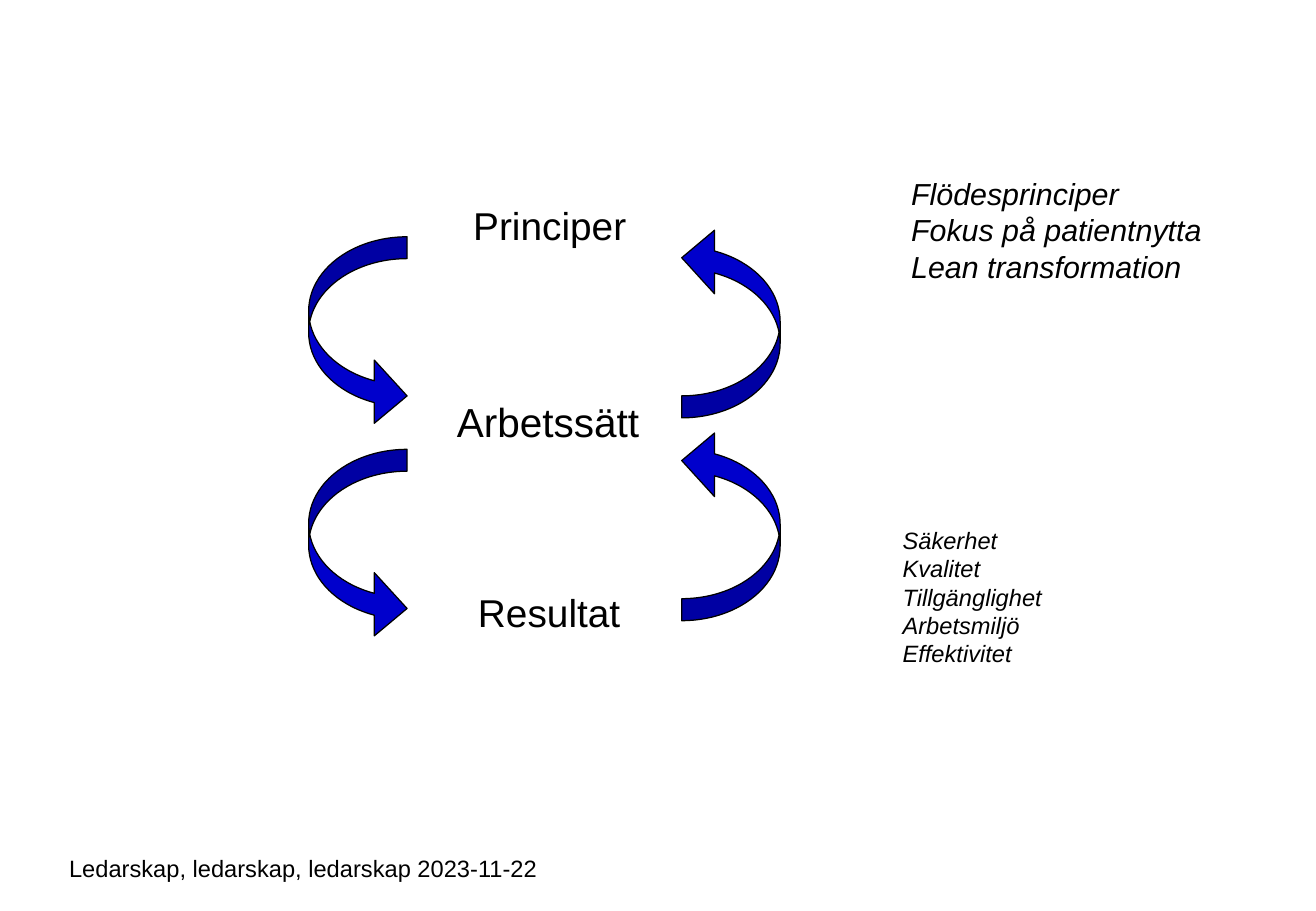
from dataclasses import dataclass

from pptx import Presentation
from pptx.dml.color import RGBColor
from pptx.enum.shapes import MSO_SHAPE
from pptx.enum.text import MSO_AUTO_SIZE, PP_ALIGN
from pptx.slide import Slide
from pptx.util import Inches, Pt

COLORS = {"arrow": "0000CC", "ink": "000000"}


@dataclass
class Label:
    lines: list[str]
    left: float
    top: float
    width: float
    height: float
    size: int
    align: PP_ALIGN = PP_ALIGN.LEFT
    italic: bool = False
    wrap: bool = True
    grow: bool = True


@dataclass
class Arrow:
    left: float
    top: float
    height: float
    turn: int
    bends: tuple[float, float, float]


def color(name: str) -> RGBColor:
    return RGBColor.from_string(COLORS[name])


def add_label(slide: Slide, label: Label) -> None:
    box = slide.shapes.add_textbox(
        Inches(label.left), Inches(label.top), Inches(label.width), Inches(label.height)
    )
    frame = box.text_frame
    frame.word_wrap = label.wrap
    frame.auto_size = MSO_AUTO_SIZE.SHAPE_TO_FIT_TEXT if label.grow else MSO_AUTO_SIZE.NONE
    frame.text = "\n".join(label.lines)
    style = {"name": "Arial", "size": Pt(label.size), "italic": label.italic}
    for para in frame.paragraphs:
        para.alignment = label.align
        for run in para.runs:
            for key, value in style.items():
                setattr(run.font, key, value)
            run.font.color.rgb = color("ink")


def add_arrow(slide: Slide, arrow: Arrow) -> None:
    shape = slide.shapes.add_shape(
        MSO_SHAPE.CURVED_RIGHT_ARROW,
        Inches(arrow.left), Inches(arrow.top), Inches(0.81), Inches(arrow.height),
    )
    shape.rotation = arrow.turn
    for index, bend in enumerate(arrow.bends):
        shape.adjustments[index] = bend
    shape.shadow.inherit = False
    shape.fill.solid()
    shape.fill.fore_color.rgb = color("arrow")
    shape.line.color.rgb = color("ink")
    shape.line.width = Pt(0.75)


DOWN = [Arrow(2.54, top, 1.57, 0, (0.222, 0.642, 0.333)) for top in (1.95, 3.7)]
UP = [Arrow(5.61, top, 1.58, 180, (0.224, 0.646, 0.333)) for top in (1.86, 3.53)]

LABELS = [
    Label(["Principer"], 3.62, 1.61, 1.81, 0.49, 23, PP_ALIGN.CENTER),
    Label(["Arbetssätt"], 3.65, 3.22, 1.72, 0.5, 24, PP_ALIGN.CENTER, wrap=False),
    Label(["Resultat"], 3.83, 4.8, 1.38, 0.49, 23, PP_ALIGN.CENTER, wrap=False),
    Label(
        ["Säkerhet", "Kvalitet", "Tillgänglighet", "Arbetsmiljö", "Effektivitet"],
        7.33, 4.28, 2.1, 1.28, 14, italic=True,
    ),
    Label(
        ["Ledarskap, ledarskap, ledarskap 2023-11-22"],
        0.47, 6.98, 9.2, 0.5, 14, grow=False,
    ),
    Label(
        ["Flödesprinciper", "Fokus på patientnytta", "Lean transformation"],
        7.4, 1.39, 3.22, 1.01, 18, italic=True,
    ),
]


def main() -> None:
    deck = Presentation()
    deck.slide_width, deck.slide_height = Inches(10.83), Inches(7.5)
    slide = deck.slides.add_slide(deck.slide_layouts[6])
    for arrow in DOWN + UP:
        add_arrow(slide, arrow)
    for label in LABELS:
        add_label(slide, label)
    deck.save("out.pptx")


if __name__ == "__main__":
    main()
